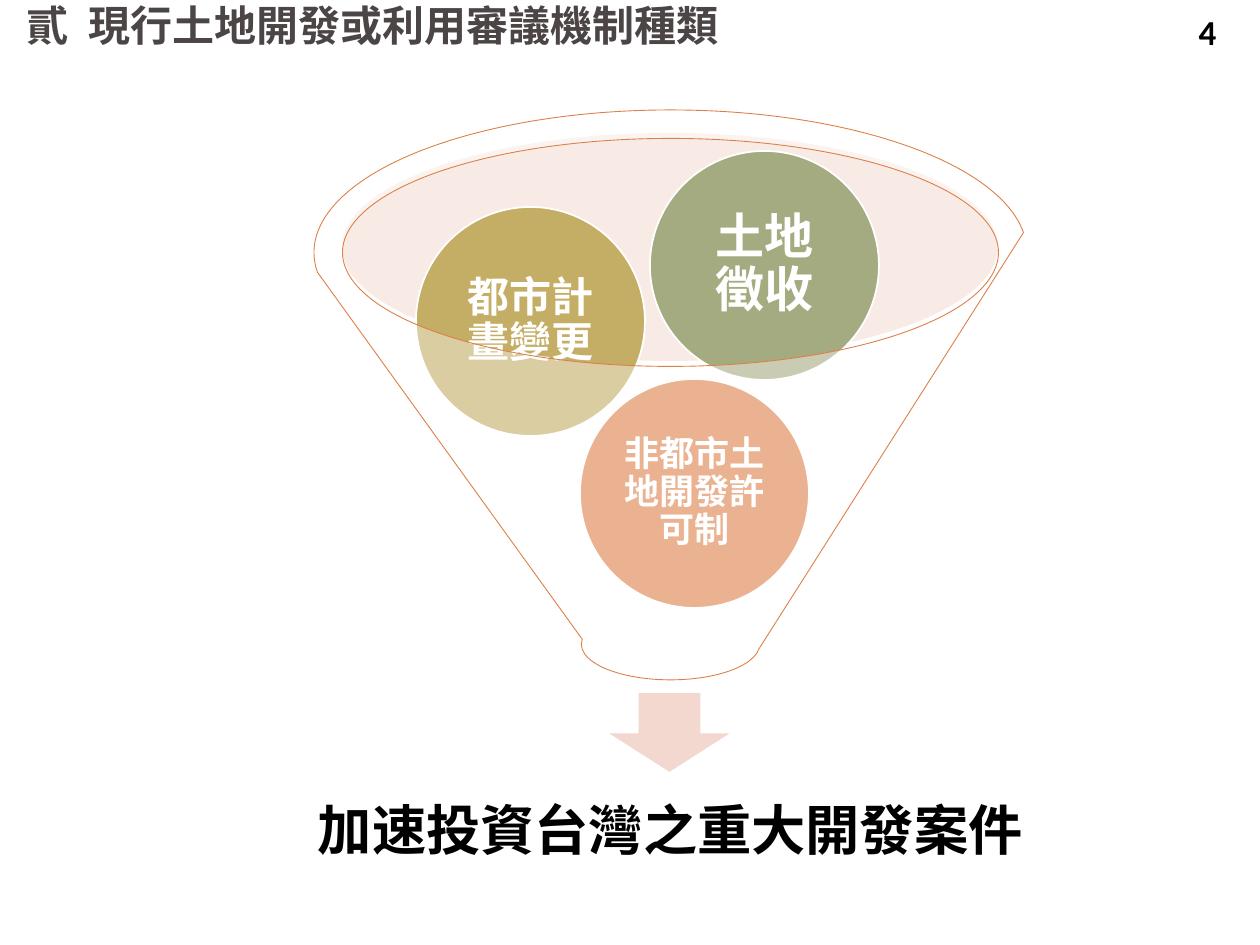
from pptx import Presentation
from pptx.dml.color import RGBColor
from pptx.enum.shapes import MSO_SHAPE as SHAPE
from pptx.enum.text import MSO_ANCHOR as ANCHOR, PP_ALIGN as ALIGN
from pptx.oxml.ns import qn
from pptx.util import Emu, Pt
from lxml.etree import SubElement

PX_PER_INCH = 126
CJK = "Noto Sans CJK SC"
LATIN = "Calibri"
BLACK, WHITE, GREY, ORANGE = "000000", "FFFFFF", "4C4545", "DD8047"
CIRCLE = 229


def px(n):
    return Emu(round(n * 914400 / PX_PER_INCH))


def color(value):
    return RGBColor.from_string(value)


class Deck:
    """Style and current slide."""

    def __init__(self, width, height):
        self.prs = Presentation()
        self.prs.slide_width, self.prs.slide_height = px(width), px(height)
        self.s = self.prs.slides.add_slide(self.prs.slide_layouts[6])

    def fill_text(self, sp, text, size, font=LATIN, fg=BLACK,
                  align=ALIGN.CENTER, spacing=0.9, inset=None):
        tf = sp.text_frame
        frame = {"word_wrap": True, "vertical_anchor": ANCHOR.MIDDLE}
        if inset is not None:
            for side in ("left", "top", "right", "bottom"):
                frame[f"margin_{side}"] = px(inset)
        for name, value in frame.items():
            setattr(tf, name, value)
        p = tf.paragraphs[0]
        p.alignment, p.line_spacing = align, spacing
        r = p.add_run()
        r.text = text
        for name, value in {"name": font, "size": Pt(size), "bold": True}.items():
            setattr(r.font, name, value)
        r.font.color.rgb = color(fg)
        SubElement(r._r.get_or_add_rPr(), qn("a:ea"), typeface=CJK)

    def text(self, box, text, size, **style):
        sp = self.s.shapes.add_textbox(*map(px, box))
        self.fill_text(sp, text, size, **style)

    def shape(self, kind, box, fill, line=None, width=1, alpha=None):
        sp = self.s.shapes.add_shape(kind, *map(px, box))
        sp.shadow.inherit = False
        sp.fill.solid()
        sp.fill.fore_color.rgb = color(fill)
        if alpha is not None:
            clr = sp._element.spPr.find(f".//{qn('a:srgbClr')}")
            SubElement(clr, qn("a:alpha"), val=str(alpha * 1000))
        if line:
            sp.line.color.rgb = color(line)
            sp.line.width = Pt(width)
        else:
            sp.line.fill.background()
        return sp

    def circle(self, left, top, fill, text, size, inset):
        sp = self.shape(SHAPE.OVAL, (left, top, CIRCLE, CIRCLE), fill, WHITE)
        self.fill_text(sp, text, size, fg=WHITE, inset=inset)


def main():
    deck = Deck(1260, 945)
    deck.text((76, -1, 1051, 57), "現行土地開發或利用審議機制種類", 24,
              font=CJK, fg=GREY, align=ALIGN.LEFT)
    deck.text((14, -1, 62, 57), "貳", 24, font=CJK, fg=GREY, align=ALIGN.LEFT)

    deck.shape(SHAPE.OVAL, (342, 133, 656, 228), "EFCDC1", alpha=40)
    deck.shape(SHAPE.DOWN_ARROW, (606, 692, 127, 81), "F2D8CF", WHITE)
    deck.text((283, 757, 774, 153), "加速投資台灣之重大開發案件", 31, inset=30)

    for ball in (
        (580, 379, ORANGE, "非都市土地開發許可制", 20, 4),
        (416, 207, "C4AD64", "都市計畫變更", 24, 4),
        (650, 151, "A5AB81", "土地 徵收", 28, 5),
    ):
        deck.circle(*ball)
    deck.shape(SHAPE.FUNNEL, (314, 110, 713, 570), WHITE, ORANGE, 0.5, alpha=40)

    deck.text((1159, 10, 97, 43), "4", 20, spacing=1.0)
    deck.prs.save("out.pptx")


if __name__ == "__main__":
    main()
